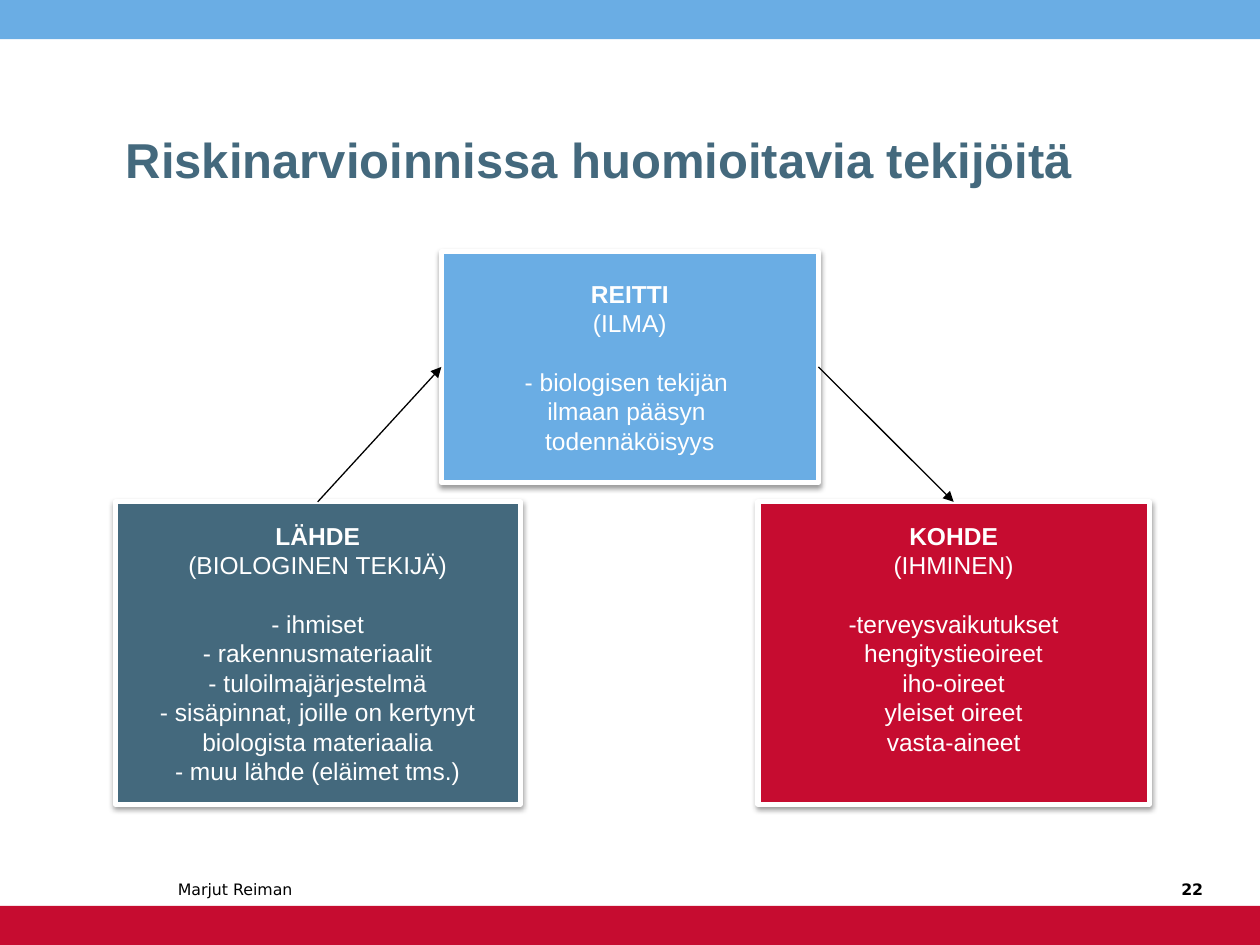
from dataclasses import dataclass

from lxml.etree import SubElement
from pptx import Presentation
from pptx.dml.color import RGBColor
from pptx.enum.shapes import MSO_CONNECTOR, MSO_SHAPE
from pptx.enum.text import MSO_ANCHOR, PP_ALIGN
from pptx.oxml.ns import qn
from pptx.util import Pt


@dataclass(frozen=True)
class Theme:
    sky: RGBColor = RGBColor(0x6A, 0xAD, 0xE4)
    crimson: RGBColor = RGBColor(0xC6, 0x0C, 0x30)
    slate: RGBColor = RGBColor(0x44, 0x69, 0x7D)
    white: RGBColor = RGBColor(0xFF, 0xFF, 0xFF)
    black: RGBColor = RGBColor(0, 0, 0)
    body_font: str = "Arial"
    footer_font: str = "DejaVu Sans"
    title_size: float = 28
    body_size: float = 14
    footer_size: float = 9
    line_pitch: float = 16.8


class SlideBuilder:
    def __init__(self, slide, theme):
        self.shapes = slide.shapes
        self.theme = theme

    def set_font(self, paragraph, name, size, color, bold=False):
        font = paragraph.font
        font.name, font.size, font.bold = name, Pt(size), bold
        font.color.rgb = color

    def rectangle(self, left, top, width, height, color):
        rect = self.shapes.add_shape(
            MSO_SHAPE.RECTANGLE, Pt(left), Pt(top), Pt(width), Pt(height))
        rect.shadow.inherit = False
        rect.fill.solid()
        rect.fill.fore_color.rgb = color
        rect.line.fill.background()
        return rect

    def label(self, left, top, width, height, text, *font, align=PP_ALIGN.LEFT):
        """Bottom-anchored single line; font holds name, size, colour, bold."""
        frame = self.shapes.add_textbox(
            Pt(left), Pt(top), Pt(width), Pt(height)).text_frame
        frame.word_wrap = True
        frame.vertical_anchor = MSO_ANCHOR.BOTTOM
        paragraph = frame.paragraphs[0]
        paragraph.text = text
        paragraph.alignment = align
        self.set_font(paragraph, *font)

    def add_soft_shadow(self, shape):
        effects = shape._element.spPr.find(qn("a:effectLst"))
        shadow = SubElement(effects, qn("a:outerShdw"), blurRad=str(Pt(3.1)),
                            dist=str(Pt(1.6)), dir="5400000", rotWithShape="0")
        color = SubElement(shadow, qn("a:srgbClr"), val=str(self.theme.black))
        SubElement(color, qn("a:alpha"), val="38000")

    def factor(self, left, top, width, height, color, heading, kind, details,
               lines_below=0):
        """Card with a bold heading, its kind, a one-line gap and details."""
        theme = self.theme
        card = self.rectangle(left, top, width, height, color)
        card.line.color.rgb = theme.white
        card.line.width = Pt(3)
        self.add_soft_shadow(card)
        frame = card.text_frame
        frame.word_wrap = True
        frame.vertical_anchor = MSO_ANCHOR.MIDDLE
        frame.margin_bottom = Pt(3.6 + lines_below * theme.line_pitch)
        for index, text in enumerate([heading, kind, *details]):
            paragraph = frame.add_paragraph() if index else frame.paragraphs[0]
            paragraph.text = text
            paragraph.alignment = PP_ALIGN.CENTER
            paragraph.line_spacing = Pt(theme.line_pitch)
            if text == kind:
                paragraph.space_after = Pt(theme.line_pitch)
            self.set_font(paragraph, theme.body_font, theme.body_size,
                          theme.white, bold=index == 0)
        return card

    def arrow(self, source, source_site, target, target_site):
        link = self.shapes.add_connector(MSO_CONNECTOR.STRAIGHT, 0, 0, 0, 0)
        link.begin_connect(source, source_site)
        link.end_connect(target, target_site)
        link.line.color.rgb = self.theme.black
        link.line.width = Pt(0.75)
        SubElement(link.line._get_or_add_ln(), qn("a:tailEnd"), type="triangle")
        SubElement(link._element.spPr, qn("a:effectLst"))


def main():
    theme = Theme()
    deck = Presentation()
    deck.slide_width, deck.slide_height = Pt(720), Pt(540)
    page = SlideBuilder(deck.slides.add_slide(deck.slide_layouts[6]), theme)

    band_height = 22.4
    page.rectangle(0, 0, 720, band_height, theme.sky)
    page.rectangle(0, 540 - band_height, 720, band_height, theme.crimson)
    page.label(64.8, 26, 590, 85, "Riskinarvioinnissa huomioitavia tekijöitä",
               theme.body_font, theme.title_size, theme.slate, True)
    footer = theme.footer_font, theme.footer_size, theme.black
    page.label(94.5, 488, 142, 29, "Marjut Reiman", *footer)
    page.label(655, 488, 39.6, 29, "22", *footer, True, align=PP_ALIGN.RIGHT)

    source = page.factor(
        65.8, 286.8, 231.5, 172.8, theme.slate, "LÄHDE", "(BIOLOGINEN TEKIJÄ)",
        ["- ihmiset", "- rakennusmateriaalit", "- tuloilmajärjestelmä",
         "- sisäpinnat, joille on kertynyt", "biologista materiaalia",
         "- muu lähde (eläimet tms.)"])
    route = page.factor(
        252.2, 143.7, 215.5, 132, theme.sky, "REITTI", "(ILMA)",
        ["- biologisen tekijän ", "ilmaan pääsyn ", "todennäköisyys"])
    target = page.factor(
        433.2, 286.8, 223.5, 172.8, theme.crimson, "KOHDE", "(IHMINEN)",
        ["-terveysvaikutukset", "hengitystieoireet", "iho-oireet",
         "yleiset oireet", "vasta-aineet"], lines_below=1)

    # Rectangle connection sites run anticlockwise from the top.
    top, left, right = 0, 1, 3
    page.arrow(route, right, target, top)
    page.arrow(source, top, route, left)

    deck.save("out.pptx")


if __name__ == "__main__":
    main()
